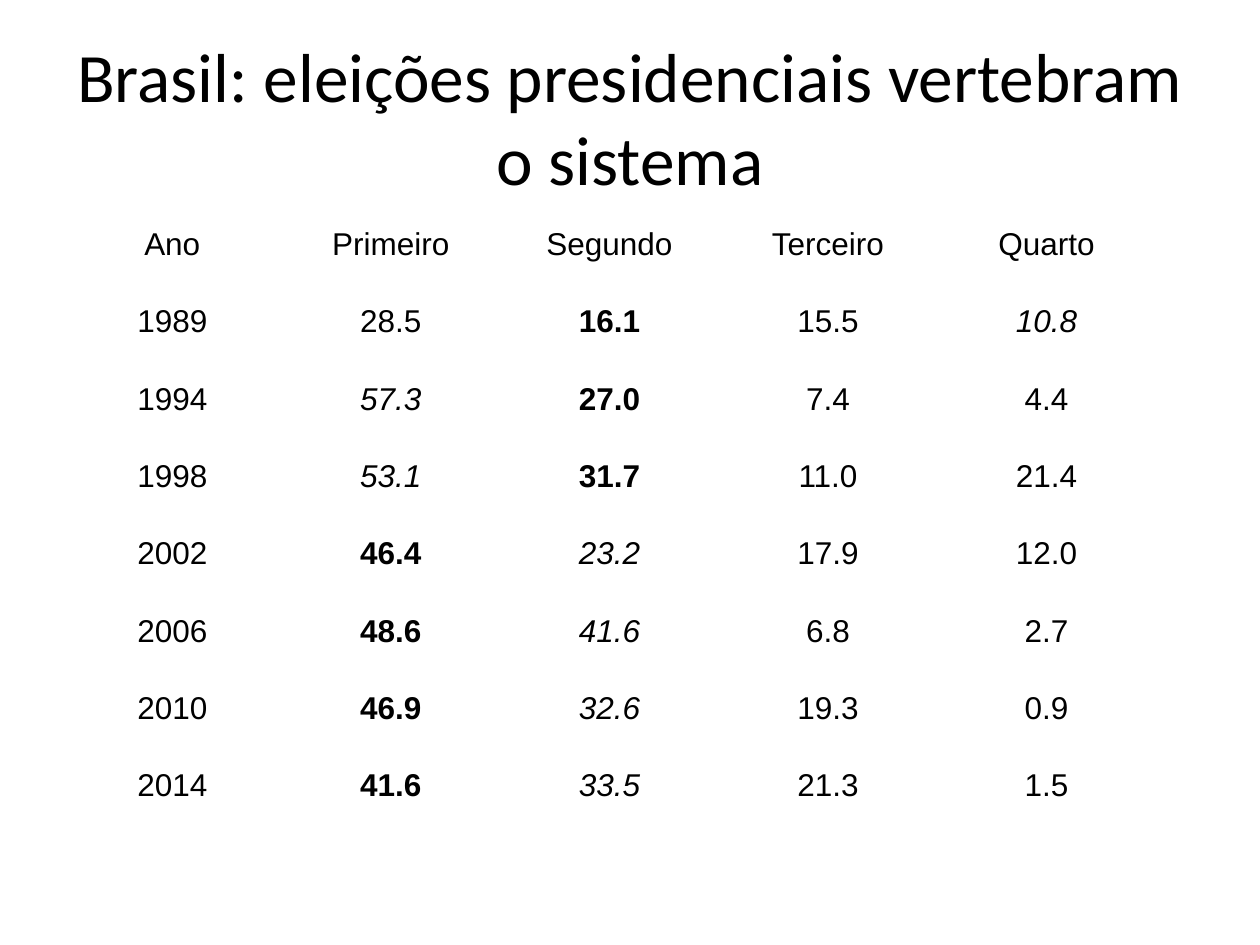
from pptx import Presentation
from pptx import util as u
from pptx.dml.color import RGBColor
from pptx.enum import text

COLORS = {"background": "FFFFFF", "text": "000000"}
HEADERS = ["Ano", "Primeiro", "Segundo", "Terceiro", "Quarto"]
RESULTS = [
    ["1989", "28.5", "16.1", "15.5", "10.8"],
    ["1994", "57.3", "27.0", "7.4", "4.4"],
    ["1998", "53.1", "31.7", "11.0", "21.4"],
    ["2002", "46.4", "23.2", "17.9", "12.0"],
    ["2006", "48.6", "41.6", "6.8", "2.7"],
    ["2010", "46.9", "32.6", "19.3", "0.9"],
    ["2014", "41.6", "33.5", "21.3", "1.5"],
]
BOLD_COLUMN = {"1989": 2, "1994": 2, "1998": 2, "2002": 1, "2006": 1, "2010": 1, "2014": 1}
ITALIC_COLUMN = {"1989": 4, "1994": 1, "1998": 1, "2002": 2, "2006": 2, "2010": 2, "2014": 2}


def add_centered_run(paragraph, words, font_name, size, bold=False, italic=False):
    paragraph.alignment = text.PP_ALIGN.CENTER
    run = paragraph.add_run()
    run.text = words
    run.font.name = font_name
    run.font.size = u.Pt(size)
    run.font.bold = bold
    run.font.italic = italic
    run.font.color.rgb = RGBColor.from_string(COLORS["text"])


presentation = Presentation()
presentation.slide_width = u.Inches(10)
presentation.slide_height = u.Inches(7.5)
width, height = presentation.slide_width, presentation.slide_height
margin = int(width * 0.05)

slide = presentation.slides.add_slide(presentation.slide_layouts[5])
slide.background.fill.solid()
slide.background.fill.fore_color.rgb = RGBColor.from_string(COLORS["background"])

title = slide.shapes.title
title.left, title.top = margin, int(height * 0.04)
title.width, title.height = width - 2 * margin, u.Inches(1.25)
title.text_frame.word_wrap = True
title.text_frame.auto_size = text.MSO_AUTO_SIZE.NONE
title.text_frame.vertical_anchor = text.MSO_ANCHOR.MIDDLE
add_centered_run(title.text_frame.paragraphs[0],
                 "Brasil: eleições presidenciais vertebram o sistema", "Calibri", 39.6)

rows = [HEADERS] + RESULTS
column_width, row_height = u.Inches(1.735), u.Inches(0.614)
table = slide.shapes.add_table(
    len(rows), len(HEADERS), margin, u.Inches(1.75),
    column_width * len(HEADERS), row_height * len(rows)).table
table.first_row = False
table.horz_banding = False
for column in table.columns:
    column.width = column_width
for row in table.rows:
    row.height = row_height

for row_index, values in enumerate(rows):
    year = values[0]
    for column_index, value in enumerate(values):
        cell = table.cell(row_index, column_index)
        cell.fill.background()
        cell.vertical_anchor = text.MSO_ANCHOR.TOP
        add_centered_run(cell.text_frame.paragraphs[0], value, "Arial", 18,
                         bold=BOLD_COLUMN.get(year) == column_index,
                         italic=ITALIC_COLUMN.get(year) == column_index)

presentation.save("out.pptx")
